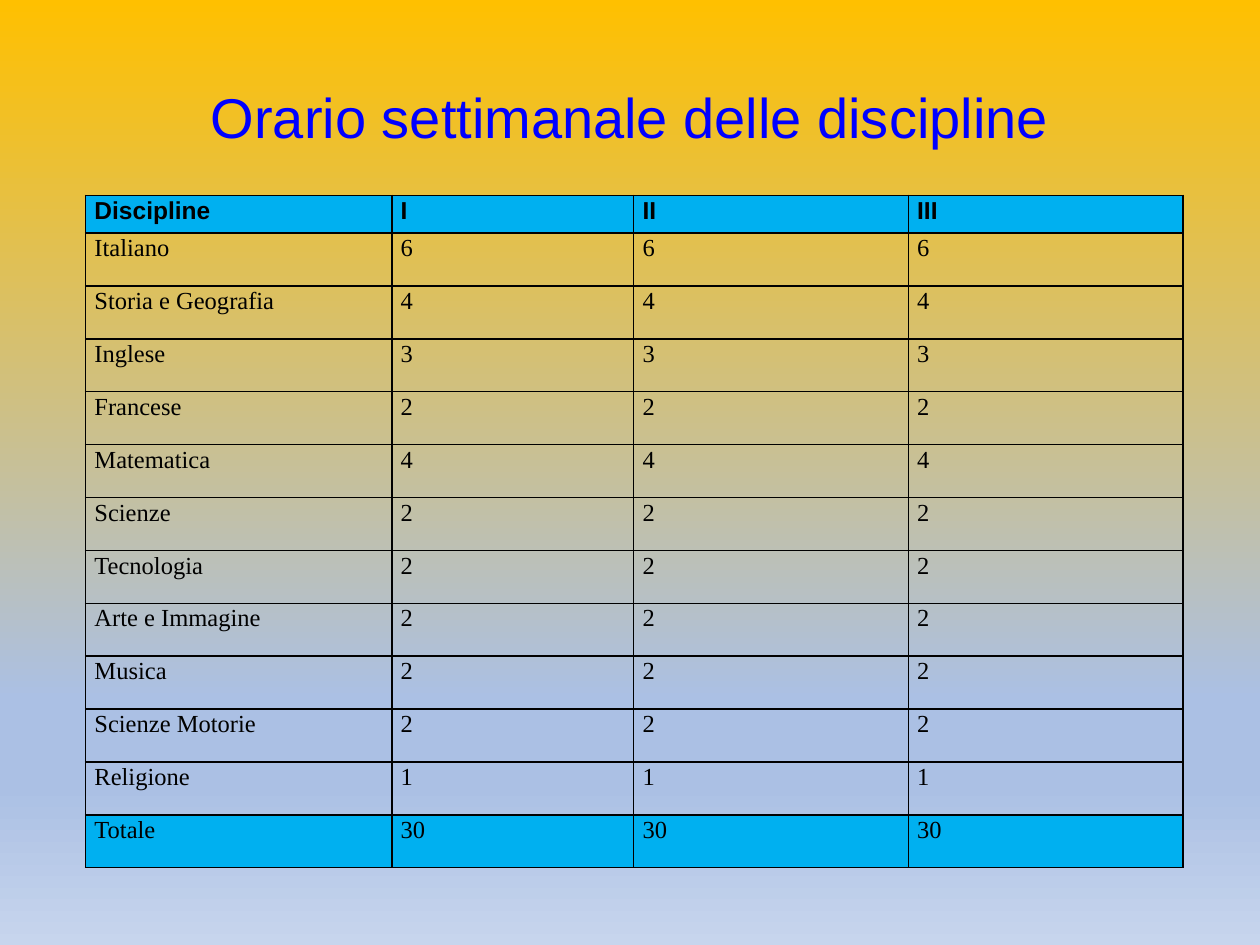
import pptx
import pptx.dml.color
import pptx.enum.text
import pptx.oxml
import pptx.oxml.ns
import pptx.util
from pptx.util import Inches

ALIGN = pptx.enum.text.PP_ALIGN
ANCHOR = pptx.enum.text.MSO_ANCHOR
NS = pptx.oxml.ns.nsdecls("a")

BLACK, BLUE, CYAN = "000000", "0000FF", "00B0F0"
BACKGROUND_STOPS = [(0, "FFC000"), (74, "ABC0E4"), (83, "ABC0E4"), (100, "C7D5ED")]

HEADER = ["Discipline", "I", "II", "III"]
WEEKLY_HOURS = {
    "Italiano": 6,
    "Storia e Geografia": 4,
    "Inglese": 3,
    "Francese": 2,
    "Matematica": 4,
    "Scienze": 2,
    "Tecnologia": 2,
    "Arte e Immagine": 2,
    "Musica": 2,
    "Scienze Motorie": 2,
    "Religione": 1,
}
COLUMN_WIDTHS = [2.43, 1.92, 2.18, 2.18]
HEADER_HEIGHT, ROW_HEIGHT = 0.3, 0.42


def rgb(color):
    return pptx.dml.color.RGBColor.from_string(color)


def set_attributes(obj, values):
    for name, value in values.items():
        setattr(obj, name, value)


def write_text(p, text, size, font, color, bold=False):
    r = p.add_run()
    r.text = text
    set_attributes(r.font, {"size": pptx.util.Pt(size), "name": font, "bold": bold})
    r.font.color.rgb = rgb(color)


def set_background(s, stops):
    """Fill the slide from top to bottom with the (percent, colour) stops."""
    fill = s.background.fill
    fill.gradient()
    fill.gradient_angle = 270
    stop_list = s.element.find(".//" + pptx.oxml.ns.qn("a:gsLst"))
    for old in list(stop_list):
        stop_list.remove(old)
    for percent, color in stops:
        stop_list.append(pptx.oxml.parse_xml(
            f'<a:gs {NS} pos="{percent * 1000}"><a:srgbClr val="{color}"/></a:gs>'))


def add_title(s, text):
    sp = s.shapes.add_textbox(Inches(0.5), Inches(0.3), Inches(9), Inches(1.25))
    tf = sp.text_frame
    set_attributes(tf, {"word_wrap": True, "vertical_anchor": ANCHOR.MIDDLE})
    p = tf.paragraphs[0]
    p.alignment = ALIGN.CENTER
    write_text(p, text, 32, "Arial", BLUE)


def add_borders(cell, color, points):
    properties = cell._tc.get_or_add_tcPr()
    for side in ("lnL", "lnR", "lnT", "lnB"):
        properties.append(pptx.oxml.parse_xml(
            f'<a:{side} {NS} w="{pptx.util.Pt(points)}"><a:solidFill>'
            f'<a:srgbClr val="{color}"/></a:solidFill></a:{side}>'))


def format_cell(cell, text, font, bold, fill):
    set_attributes(cell, {
        "margin_left": Inches(0.07), "margin_right": Inches(0.07),
        "margin_top": 0, "margin_bottom": 0,
    })
    add_borders(cell, BLACK, 1)
    if fill:
        cell.fill.solid()
        cell.fill.fore_color.rgb = rgb(fill)
    else:
        cell.fill.background()
    p = cell.text_frame.paragraphs[0]
    set_attributes(p, {"alignment": ALIGN.JUSTIFY, "line_spacing": 1.07})
    write_text(p, text, 14, font, BLACK, bold)


def add_timetable(s):
    total = sum(WEEKLY_HOURS.values())
    rows = [HEADER]
    for subject, hours in [*WEEKLY_HOURS.items(), ("Totale", total)]:
        rows.append([subject] + [str(hours)] * 3)
    last = len(rows) - 1
    height = HEADER_HEIGHT + last * ROW_HEIGHT
    table = s.shapes.add_table(
        len(rows), len(HEADER), Inches(0.68), Inches(1.55),
        Inches(sum(COLUMN_WIDTHS)), Inches(height)).table
    set_attributes(table, {"first_row": False, "horz_banding": False})
    for column, width in zip(table.columns, COLUMN_WIDTHS):
        column.width = Inches(width)
    for i, texts in enumerate(rows):
        is_header = i == 0
        table.rows[i].height = Inches(HEADER_HEIGHT if is_header else ROW_HEIGHT)
        font = "Arial" if is_header else "Times New Roman"
        fill = CYAN if i in (0, last) else None
        for j, text in enumerate(texts):
            format_cell(table.cell(i, j), text, font, is_header, fill)


def main():
    prs = pptx.Presentation()
    set_attributes(prs, {"slide_width": Inches(10), "slide_height": Inches(7.5)})
    s = prs.slides.add_slide(prs.slide_layouts[6])
    set_background(s, BACKGROUND_STOPS)
    add_title(s, "Orario settimanale delle discipline")
    add_timetable(s)
    prs.save("out.pptx")


if __name__ == "__main__":
    main()
